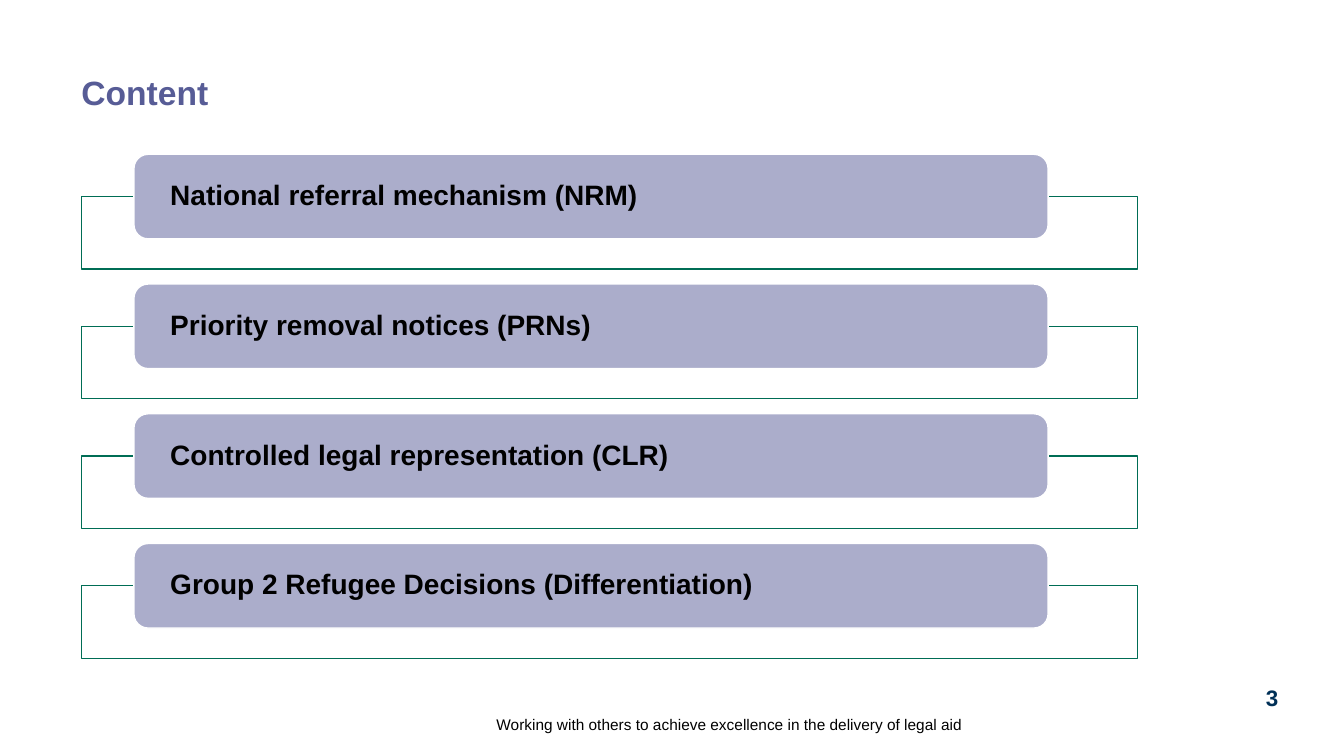
import lxml.etree
import pptx
import pptx.dml.color
import pptx.enum.shapes
import pptx.enum.text
import pptx.oxml.ns
import pptx.util

Pt = pptx.util.Pt
SHAPES = pptx.enum.shapes.MSO_SHAPE
ALIGN = pptx.enum.text.PP_ALIGN
ANCHOR = pptx.enum.text.MSO_ANCHOR

COLOURS = {
    "title": "575C96",
    "bar": "ABADCB",
    "frame": "006D55",
    "white": "FFFFFF",
    "text": "000000",
    "number": "003057",
}
TOPICS = [
    "National referral mechanism (NRM)",
    "Priority removal notices (PRNs)",
    "Controlled legal representation (CLR)",
    "Group 2 Refugee Decisions (Differentiation)",
]


def colour(name):
    """Return the named colour."""
    return pptx.dml.color.RGBColor.from_string(COLOURS[name])


def set_text(shape, text, size, colour_name, bold=True, align=ALIGN.LEFT,
             anchor=ANCHOR.TOP, inset=0, spacing=1.0):
    """Write one formatted paragraph into a shape."""
    frame = shape.text_frame
    frame_format = {
        "word_wrap": True,
        "auto_size": pptx.enum.text.MSO_AUTO_SIZE.NONE,
        "vertical_anchor": anchor,
        "margin_left": Pt(inset),
        "margin_right": Pt(inset),
        "margin_top": 0,
        "margin_bottom": 0,
    }
    for name, value in frame_format.items():
        setattr(frame, name, value)
    paragraph = frame.paragraphs[0]
    paragraph.alignment = align
    paragraph.line_spacing = spacing
    paragraph.space_before = Pt(0)
    run = paragraph.add_run()
    run.text = text
    font_format = {"name": "Arial", "size": Pt(size), "bold": bold}
    for name, value in font_format.items():
        setattr(run.font, name, value)
    run.font.color.rgb = colour(colour_name)


def add_panel(slide, kind, box, fill, line):
    """Add a filled, outlined shape in the given box."""
    shape = slide.shapes.add_shape(kind, *map(Pt, box))
    shape.shadow.inherit = False
    shape.fill.solid()
    shape.fill.fore_color.rgb = colour(fill)
    shape.line.color.rgb = colour(line)
    shape.line.width = Pt(1)
    return shape


def add_title(slide, box, text):
    """Move and fill the title placeholder."""
    title = slide.shapes.title
    for name, value in zip(("left", "top", "width", "height"), box):
        setattr(title, name, Pt(value))
    set_text(title, text, 24, "title", spacing=0.9)


def add_topic(slide, box, text):
    """Add a frame along the foot of the box and a bar over its top edge."""
    left, top, width, height = box
    frame_top = 30.2
    frame = add_panel(slide, SHAPES.RECTANGLE,
                      (left, top + frame_top, width, height - frame_top),
                      "white", "frame")
    fill_colour = frame.fill._xPr.find(".//" + pptx.oxml.ns.qn("a:srgbClr"))
    lxml.etree.SubElement(fill_colour, pptx.oxml.ns.qn("a:alpha"), val="90000")
    bar = add_panel(slide, SHAPES.ROUNDED_RECTANGLE,
                    (left + 37.5, top, 653, 2 * frame_top), "bar", "white")
    set_text(bar, text, 20, "text", anchor=ANCHOR.MIDDLE, inset=23, spacing=0.9)


def add_topics(slide, box):
    """Stack the topics at an equal pitch within the box."""
    left, top, width, height = box
    topic_height = 82
    pitch = (height - topic_height) / (len(TOPICS) - 1)
    for index, text in enumerate(TOPICS):
        add_topic(slide, (left, top + index * pitch, width, topic_height), text)


def add_label(slide, box, text, **text_format):
    """Add a text box in the given box."""
    label = slide.shapes.add_textbox(*map(Pt, box))
    set_text(label, text, **text_format)


def main():
    """Build and save the presentation."""
    presentation = pptx.Presentation()
    presentation.slide_width = Pt(960)
    presentation.slide_height = Pt(540)
    slide = presentation.slides.add_slide(presentation.slide_layouts[5])
    add_title(slide, (58.2, 54.7, 608, 27.4), "Content")
    add_topics(slide, (58.2, 110.2, 754.5, 360))
    add_label(slide, (151.2, 498.2, 536.4, 26),
              "Working with others to achieve excellence in the delivery of legal aid",
              size=11, colour_name="text", bold=False, align=ALIGN.RIGHT,
              anchor=ANCHOR.BOTTOM)
    add_label(slide, (897.8, 488.9, 21.6, 20.2), "3",
              size=16, colour_name="number", align=ALIGN.CENTER)
    presentation.save("out.pptx")


if __name__ == "__main__":
    main()
